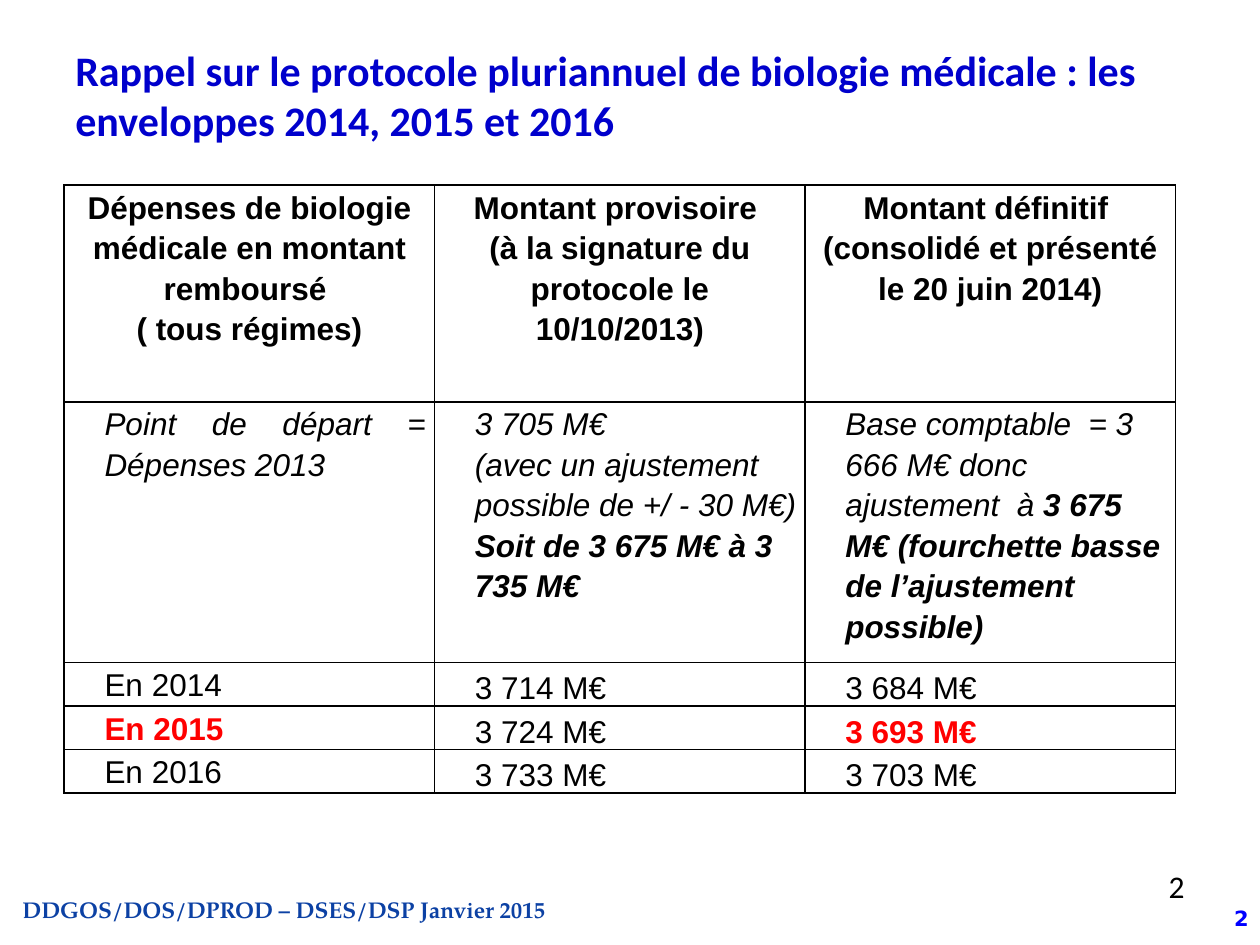
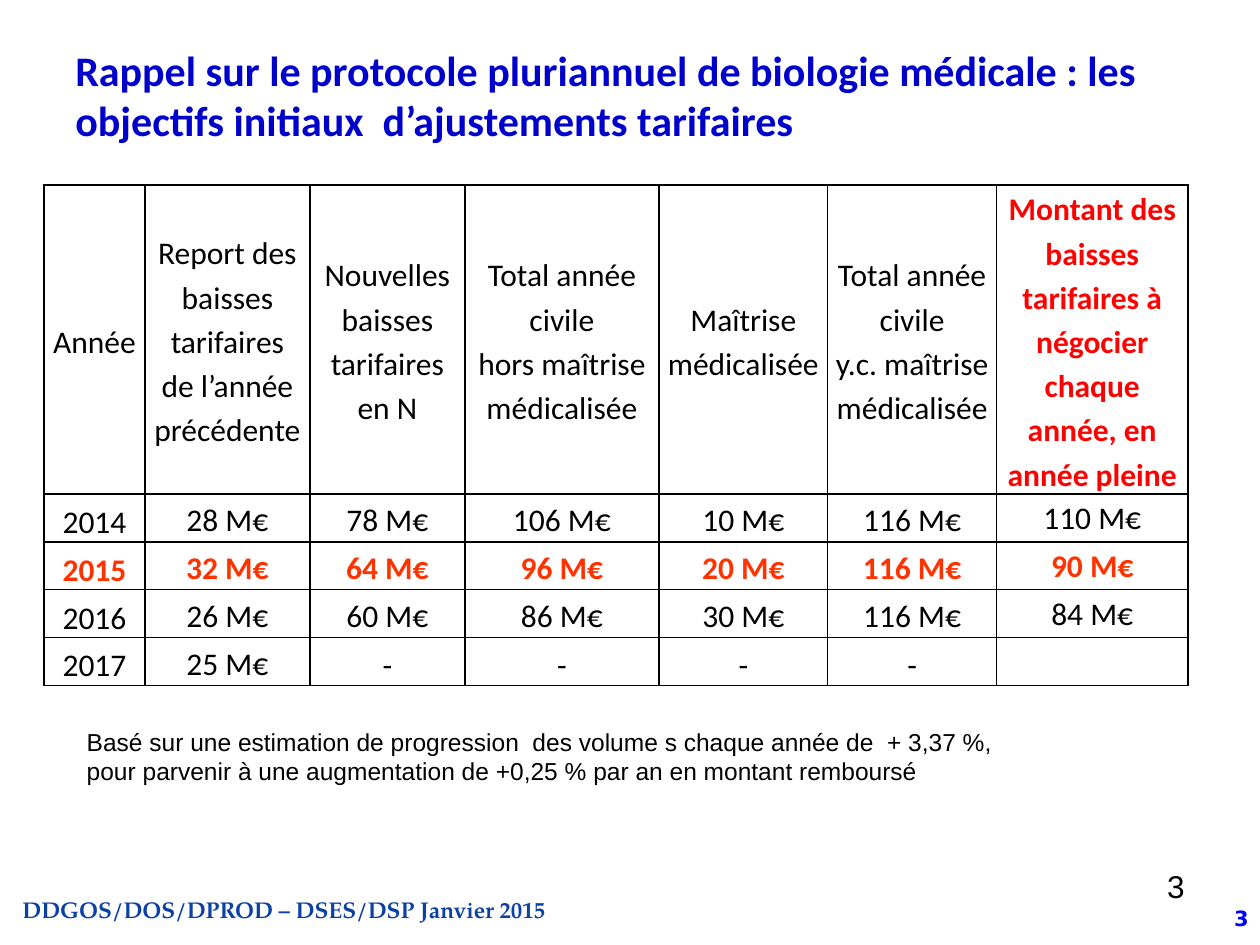
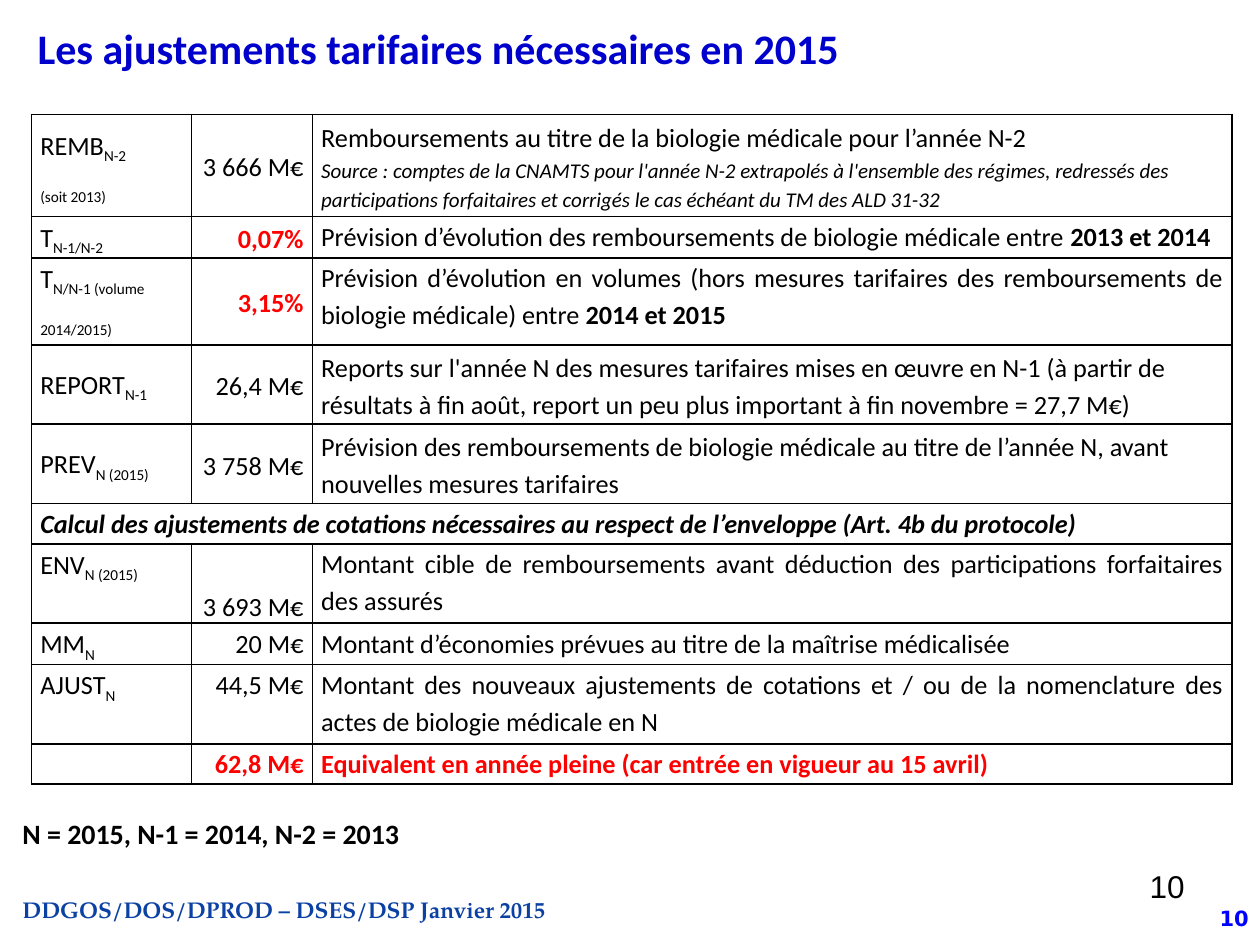
from dataclasses import dataclass, field

from lxml.etree import SubElement
from pptx import Presentation
from pptx.dml.color import RGBColor
from pptx.enum.text import MSO_ANCHOR, PP_ALIGN
from pptx.oxml.ns import qn
from pptx.util import Inches, Pt

TOP, MID, LOW = MSO_ANCHOR.TOP, MSO_ANCHOR.MIDDLE, MSO_ANCHOR.BOTTOM
LEFT, RIGHT = PP_ALIGN.LEFT, PP_ALIGN.RIGHT
CENTER, FULL = PP_ALIGN.CENTER, PP_ALIGN.JUSTIFY


@dataclass(frozen=True)
class Theme:
    """Colours, fonts and type sizes of the deck."""
    ink: str = "000000"
    title: str = "0000CC"
    foot: str = "0C41A4"
    page: str = "0000FF"
    red: str = "FF0000"
    warm: str = "FF3300"
    body: str = "Calibri"
    sans: str = "Arial"
    serif: str = "TeX Gyre Pagella"
    digit: str = "DejaVu Sans"
    head: int = 24
    large: int = 18
    note: int = 16
    dense: int = 15
    small: int = 14
    footer: int = 13
    tiny: int = 12


T = Theme()


@dataclass
class Bit:
    """Content with a look of its own."""
    text: object
    look: dict = field(default_factory=dict)


def mark(text, **look):
    """Give content its own look."""
    return Bit(text, look)


def sub(text):
    """Set text as a subscript."""
    return mark(text, base=-25000)


def tint(row, **look):
    """Give every cell of a row the same look under its own."""
    cells = [c if isinstance(c, Bit) else Bit(c) for c in row]
    return [Bit(c.text, {**look, **c.look}) for c in cells]


def style(run, size, font, color, bold, italic, base):
    """Apply character format to a run."""
    run.font.size, run.font.name = Pt(size), font
    run.font.bold, run.font.italic = bold, italic
    run.font.color.rgb = RGBColor.from_string(color)
    if base:
        run._r.get_or_add_rPr().set("baseline", str(base))


def write(frame, text, align=LEFT, space=None, indent=0, size=T.large,
          font=T.body, color=T.ink, bold=False, italic=False, base=0):
    """Write a list of paragraphs, each a string, a Bit or a tuple of them."""
    plain = dict(size=size, font=font, color=color, bold=bold,
                 italic=italic, base=base)
    for n, item in enumerate(text if isinstance(text, list) else [text]):
        para = frame.add_paragraph() if n else frame.paragraphs[0]
        para.alignment = align
        if space:
            para.line_spacing = space
        if indent:
            para._p.get_or_add_pPr().set("marL", str(Inches(indent)))
        for bit in item if isinstance(item, tuple) else (item,):
            bit = bit if isinstance(bit, Bit) else Bit(bit)
            for k, line in enumerate(bit.text.split("\n")):
                if k:
                    para.add_line_break()
                run = para.add_run()
                run.text = line
                style(run, **{**plain, **bit.look})


def label(slide, box, text, wrap=True, **look):
    """Place a text box."""
    frame = slide.shapes.add_textbox(*map(Inches, box)).text_frame
    frame.word_wrap = wrap
    write(frame, text, **look)


def edge(cell):
    """Rule the four sides of a cell."""
    props = cell._tc.get_or_add_tcPr()
    for side in ("a:lnL", "a:lnR", "a:lnT", "a:lnB"):
        line = SubElement(props, qn(side), w=str(Pt(1)))
        fill = SubElement(line, qn("a:solidFill"))
        SubElement(fill, qn("a:srgbClr"), val=T.ink)


def grid(slide, spot, cols, rows, data, pad, forms, **base):
    """Place a ruled table whose columns each have a form."""
    box = (*spot, sum(cols), sum(rows))
    table = slide.shapes.add_table(
        len(rows), len(cols), *map(Inches, box)).table
    table.first_row = table.horz_banding = False
    for col, wide in zip(table.columns, cols):
        col.width = Inches(wide)
    for row, high in zip(table.rows, rows):
        row.height = Inches(high)
    for i, line in enumerate(data):
        if len(line) == 1:
            table.cell(i, 0).merge(table.cell(i, len(cols) - 1))
        for j in range(len(cols)):
            cell = table.cell(i, j)
            edge(cell)
            cell.fill.background()
            cell.margin_left = cell.margin_right = Inches(pad)
            cell.margin_top = cell.margin_bottom = 0
            if j < len(line):
                item = line[j] if isinstance(line[j], Bit) else Bit(line[j])
                look = {**base, **forms[j], **item.look}
                cell.vertical_anchor = look.pop("anchor", TOP)
                write(cell.text_frame, item.text, space=1.15, **look)


def start(deck, page, title, box, font=T.sans):
    """Add a slide with its title, footer and page numbers."""
    slide = deck.slides.add_slide(deck.slide_layouts[6])
    label(slide, (0.08, 7.06, 5.63, 0.32),
          "DDGOS/DOS/DPROD – DSES/DSP Janvier 2015",
          size=T.footer, font=T.serif, color=T.foot, bold=True)
    label(slide, (7.68, 7.14, 2.33, 0.52), page, align=RIGHT,
          size=T.tiny, font=T.digit, color=T.page, bold=True)
    label(slide, box, title, size=T.head, color=T.title, bold=True)
    label(slide, (7.17, 6.83, 2.33, 0.52), page, align=RIGHT, font=font)
    return slide


def funds(deck):
    """Build the slide of yearly budgets."""
    slide = start(deck, "2", "Rappel sur le protocole pluriannuel de biologie "
                  "médicale : les enveloppes 2014, 2015 et 2016",
                  (0.5, 0.3, 9.5, 1.25), T.body)
    hot = dict(color=T.red, bold=True)
    data = [
        tint(["Dépenses de biologie médicale en montant remboursé \n"
              "( tous régimes)",
              "Montant provisoire \n(à la signature du protocole le "
              "10/10/2013)",
              "Montant définitif \n(consolidé et présenté le 20 juin 2014)"],
             align=CENTER, indent=0, bold=True, anchor=TOP),
        tint([mark("Point de départ = Dépenses 2013", align=FULL),
              ["3 705 M€ \n(avec un ajustement possible de +/ - 30 M€)",
               mark("Soit de 3 675 M€ à 3 735 M€", bold=True)],
              [("Base comptable  = 3 666 M€ donc ajustement  à ",
                mark("3 675 M€ (fourchette basse de l’ajustement possible)",
                     bold=True))]],
             align=LEFT, italic=True, anchor=TOP),
        ["En 2014", "3 714 M€", "3 684 M€"],
        [mark("En 2015", **hot), "3 724 M€", mark("3 693 M€", **hot)],
        ["En 2016", "3 733 M€", "3 703 M€"],
    ]
    forms = [{}, dict(anchor=LOW), dict(anchor=LOW)]
    grid(slide, (0.51, 1.47), [2.94] * 3, [1.72, 2.07] + [0.345] * 3, data,
         0.07, forms, font=T.sans, align=FULL, indent=0.25)


def goals(deck):
    """Build the slide of price cut targets."""
    slide = start(deck, "3", "Rappel sur le protocole pluriannuel de biologie "
                  "médicale : les objectifs initiaux  d’ajustements tarifaires",
                  (0.5, 0.3, 9.5, 1.01))
    dash = mark("-", anchor=LOW)
    data = [
        [mark("Année", anchor=MID),
         "Report des baisses tarifaires de l’année précédente",
         "Nouvelles baisses tarifaires en N",
         "Total année civile\nhors maîtrise médicalisée",
         "Maîtrise médicalisée",
         "Total année civile\ny.c. maîtrise médicalisée",
         mark("Montant des baisses tarifaires à négocier chaque année, "
              "en année pleine", color=T.red, bold=True)],
        ["2014", "28 M€", "78 M€", "106 M€", "10 M€", "116 M€", "110 M€"],
        tint(["2015", "32 M€", "64 M€", "96 M€", "20 M€", "116 M€", "90 M€"],
             color=T.warm, bold=True),
        ["2016", "26 M€", "60 M€", "86 M€", "30 M€", "116 M€", "84 M€"],
        ["2017", "25 M€", dash, dash, dash, dash],
    ]
    forms = [dict(anchor=LOW)] + [dict(anchor=MID)] * 5 + [{}]
    grid(slide, (0.35, 1.47), [0.8, 1.31, 1.23, 1.54, 1.34, 1.34, 1.52],
         [2.45] + [0.38] * 4, data, 0.05, forms, align=CENTER)
    label(slide, (0.59, 5.72, 8.74, 0.57),
          ["Basé sur une estimation de progression  des volume s chaque "
           "année de  + 3,37 %,",
           "pour parvenir à une augmentation de +0,25 % par an en montant "
           "remboursé"], size=T.small, font=T.sans)


def needs(deck):
    """Build the slide of adjustments needed in 2015."""
    slide = start(deck, "10", "Les ajustements tarifaires nécessaires en 2015",
                  (0.2, 0.13, 9, 0.69))
    hot = dict(color=T.red, bold=True)
    full = dict(align=FULL, anchor=TOP)
    upper = [
        [[("REMB", sub("N-2 \n(soit 2013)"))], "3 666 M€",
         ["Remboursements au titre de la biologie médicale pour l’année N-2",
          mark("Source : comptes de la CNAMTS pour l'année N-2 extrapolés à "
               "l'ensemble des régimes, redressés des participations "
               "forfaitaires et corrigés le cas échéant du TM des ALD 31-32",
               size=T.tiny, italic=True)]],
        [[("T", sub("N-1/N-2"))], mark("0,07%", **hot),
         mark([("Prévision d’évolution des remboursements de biologie "
                "médicale entre ", mark("2013 et 2014", bold=True))], **full)],
        [mark([("T", sub("N/N-1 (volume  2014/2015)"))], anchor=TOP),
         mark("3,15%", **hot),
         mark([("Prévision d’évolution en volumes (hors mesures tarifaires "
                "des remboursements de biologie médicale) entre ",
                mark("2014 et 2015", bold=True))], **full)],
        [[("REPORT", sub("N-1"))], "26,4 M€",
         "Reports sur l'année N des mesures tarifaires mises en œuvre en N-1 "
         "(à partir de résultats à fin août, report un peu plus important à "
         "fin novembre = 27,7 M€)"],
        [[("PREV", sub("N (2015)"))], "3 758 M€",
         "Prévision des remboursements de biologie médicale au titre de "
         "l’année N, avant nouvelles mesures tarifaires"],
    ]
    lower = [
        [mark("Calcul des ajustements de cotations nécessaires au respect de "
              "l’enveloppe (Art. 4b du protocole)", bold=True, italic=True)],
        [[("ENV", sub("N (2015)"))], mark("3 693 M€", anchor=LOW),
         mark("Montant cible de remboursements avant déduction des "
              "participations forfaitaires des assurés", **full)],
        [[("MM", sub("N"))], "20 M€",
         mark("Montant d’économies prévues au titre de la maîtrise "
              "médicalisée", **full)],
        [[("AJUST", sub("N"))], "44,5 M€",
         mark("Montant des nouveaux ajustements de cotations et / ou de la "
              "nomenclature des actes de biologie médicale en N", **full)],
        tint(["", "62,8 M€",
              mark("Equivalent en année pleine (car entrée en vigueur au "
                   "15 avril)", **full)], **hot),
    ]
    data = [tint(row, anchor=MID) for row in upper] + lower
    grid(slide, (0.25, 0.91), [1.27, 0.96, 7.3],
         [0.81, 0.32, 0.69, 0.63, 0.63, 0.32, 0.63, 0.32, 0.63, 0.32],
         data, 0.07, [{}, dict(align=RIGHT), {}], size=T.dense)
    label(slide, (0.08, 6.43, 3.23, 0.37), "N = 2015, N-1 = 2014, N-2 = 2013",
          wrap=False, align=FULL, size=T.note, bold=True)


def main():
    """Build and save the deck."""
    deck = Presentation()
    deck.slide_width, deck.slide_height = Inches(10), Inches(7.5)
    for build in (funds, goals, needs):
        build(deck)
    deck.save("out.pptx")


if __name__ == "__main__":
    main()
